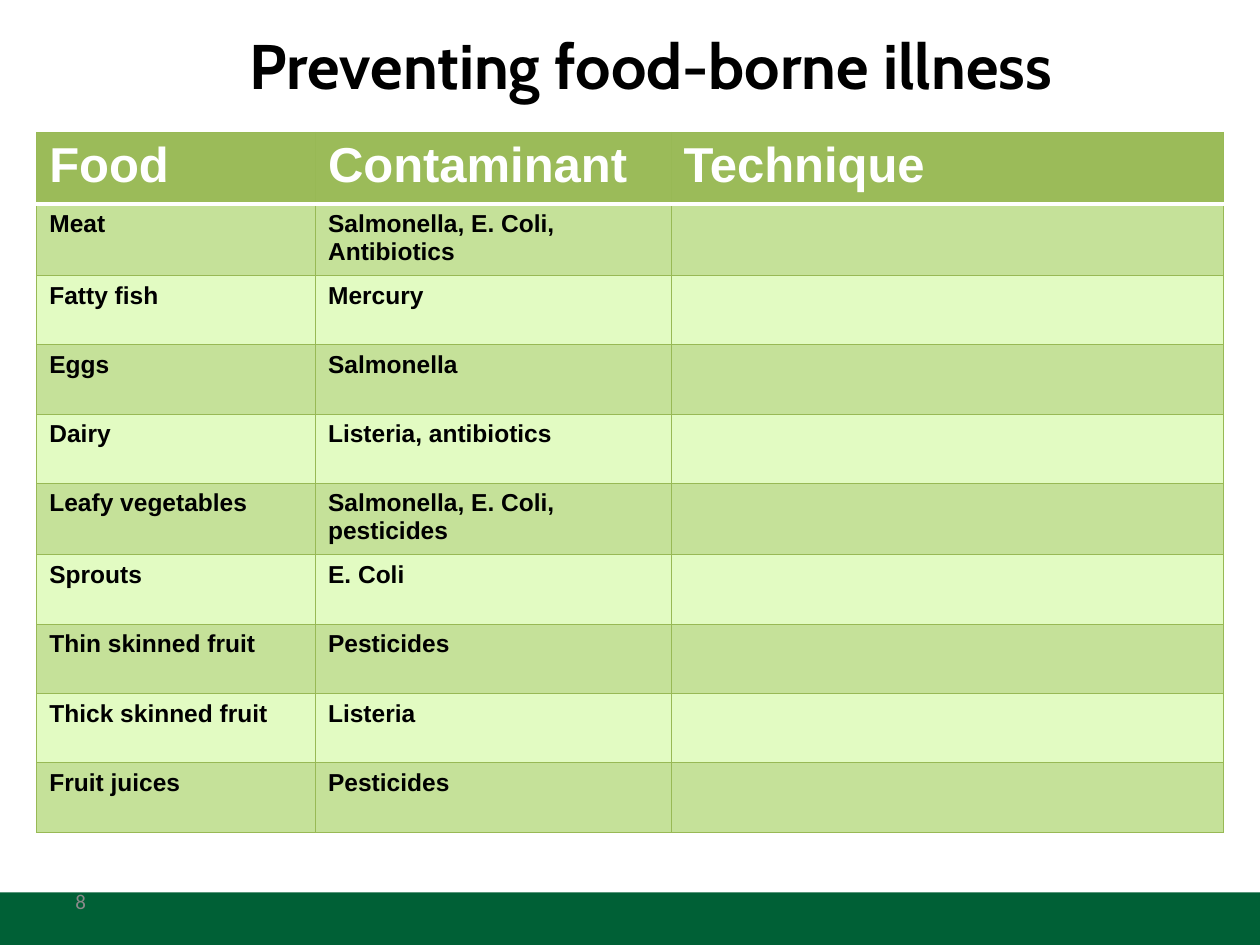
import pptx
import pptx.dml.color
import pptx.enum.shapes
import pptx.enum.text
import pptx.oxml.ns
import pptx.util
from lxml import etree

Pt = pptx.util.Pt
COLORS = {
    "footer": "006036", "number": "898989", "black": "000000", "white": "FFFFFF",
    "header": "9BBB59", "grid": "98B955", "dark band": "C5E199", "light band": "E2FBC2",
}
ROWS = [
    ("Food", "Contaminant", "Technique"),
    ("Meat", "Salmonella, E. Coli, Antibiotics", ""),
    ("Fatty fish", "Mercury", ""),
    ("Eggs", "Salmonella", ""),
    ("Dairy", "Listeria, antibiotics", ""),
    ("Leafy vegetables", "Salmonella, E. Coli, pesticides", ""),
    ("Sprouts", "E. Coli", ""),
    ("Thin skinned fruit", "Pesticides", ""),
    ("Thick skinned fruit", "Listeria", ""),
    ("Fruit juices", "Pesticides", ""),
]
COLUMN_WIDTHS = (159.3, 203.2, 315.5)
HEADER_HEIGHT, ROW_HEIGHT = 41, 39.6


def add_span(para, text, font, size, color, bold=False):
    span = para.add_run()
    span.text = text
    span.font.name = font
    span.font.size = Pt(size)
    span.font.bold = bold
    span.font.color.rgb = pptx.dml.color.RGBColor.from_string(COLORS[color])


def add_border(cell, side, color, width):
    line = etree.SubElement(cell._tc.get_or_add_tcPr(), pptx.oxml.ns.qn(f"a:ln{side}"),
                            w=str(Pt(width)))
    fill = etree.SubElement(line, pptx.oxml.ns.qn("a:solidFill"))
    etree.SubElement(fill, pptx.oxml.ns.qn("a:srgbClr"), val=COLORS[color])


deck = pptx.Presentation()
deck.slide_width, deck.slide_height = Pt(720), Pt(540)
page = deck.slides.add_slide(deck.slide_layouts[5])

# Footer bar
bar = page.shapes.add_shape(pptx.enum.shapes.MSO_SHAPE.RECTANGLE,
                            Pt(0), Pt(510), Pt(720), Pt(30))
bar.shadow.inherit = False
bar.fill.solid()
bar.fill.fore_color.rgb = pptx.dml.color.RGBColor.from_string(COLORS["footer"])
bar.line.fill.background()

# Title
title = page.shapes.title
title.left, title.top, title.width, title.height = Pt(48), Pt(-12), Pt(648), Pt(97)
title.text_frame.vertical_anchor = pptx.enum.text.MSO_ANCHOR.MIDDLE
para = title.text_frame.paragraphs[0]
para.alignment = pptx.enum.text.PP_ALIGN.CENTER
add_span(para, "Preventing food-borne illness", "Cabin", 36, "black", bold=True)

# Slide number
box = page.shapes.add_textbox(Pt(36), Pt(500.5), Pt(168), Pt(28.8))
box.text_frame.word_wrap = True
box.text_frame.vertical_anchor = pptx.enum.text.MSO_ANCHOR.MIDDLE
add_span(box.text_frame.paragraphs[0], "8", "Calibri", 12, "number")

# Food table
table = page.shapes.add_table(
    len(ROWS), len(COLUMN_WIDTHS), Pt(21), Pt(75.6), Pt(sum(COLUMN_WIDTHS)),
    Pt(HEADER_HEIGHT + ROW_HEIGHT * (len(ROWS) - 1))).table
for column, width in zip(table.columns, COLUMN_WIDTHS):
    column.width = Pt(width)

for row_index, texts in enumerate(ROWS):
    is_header = row_index == 0
    table.rows[row_index].height = Pt(HEADER_HEIGHT if is_header else ROW_HEIGHT)
    if is_header:
        band, size, ink = "header", 28, "white"
    else:
        band, size, ink = ("dark band" if row_index % 2 else "light band"), 14, "black"
    for column_index, text in enumerate(texts):
        cell = table.cell(row_index, column_index)
        if text:
            add_span(cell.text_frame.paragraphs[0], text, "Arial", size, ink, bold=True)
        for side in "LRTB":
            under_header = (row_index, side) in ((0, "B"), (1, "T"))
            add_border(cell, side, "white" if under_header else "grid",
                       2 if under_header else 0.75)
        cell.fill.solid()
        cell.fill.fore_color.rgb = pptx.dml.color.RGBColor.from_string(COLORS[band])

deck.save("out.pptx")
